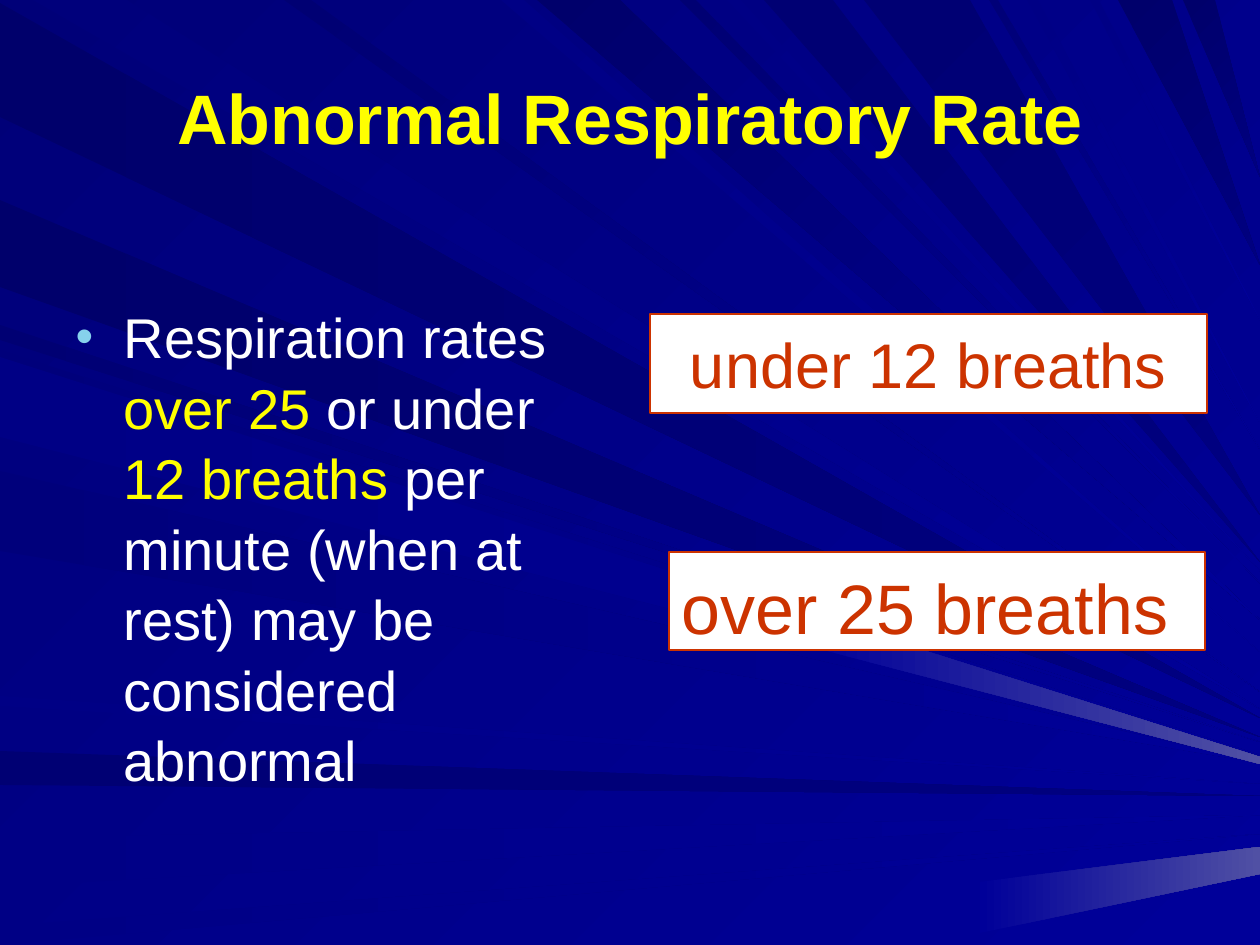
"""Build the slide on abnormal respiratory rates over a background of light rays."""
import pptx
import pptx.dml.color
import pptx.enum.shapes
import pptx.enum.text
import pptx.oxml.ns
import pptx.util
from lxml import etree

EMU_PER_PIXEL = 914400 / 126
WIDTH, HEIGHT = 1260, 945

THEME = {
    "font": "Arial",
    "title": "FFFF00", "highlight": "FFFF00", "text": "FFFFFF",
    "bullet": "86D1EC", "alert": "CC3300", "panel": "FFFFFF",
    "night": "000078", "deep": "00006B", "dark": "000073", "middle": "00007B",
    "soft": "000085", "dim": "000080", "bright": "000099", "glint": "5050A4",
    "title_size": 40, "body_size": 32, "under_size": 36, "over_size": 40,
    "line_width": 0.75, "line_spacing": 1.05,
}

TITLE = "Abnormal Respiratory Rate"
TITLE_BOX = (63, 38, 1134, 157)
BODY = [
    ("Respiration rates ", "text"),
    ("over 25", "highlight"),
    (" or under ", "text"),
    ("12 breaths", "highlight"),
    (" per minute (when at rest) may be considered abnormal", "text"),
]
BODY_BOX = (63, 293, 557, 551)
BODY_INDENT = 48
UNDER = ("under 12 breaths", (650, 314, 557, 99), "under_size", 40)
OVER = ("over 25 breaths", (669, 552, 536, 98), "over_size", 13)
PANEL_TOP_MARGIN = 8

RAYS = [
    ("left", 3, 117, 718, "deep", "dim"),
    ("top", 33, 127, 709, "middle", "bright"),
    ("left", 751, 785, 796, "dark", "dim"),
    ("left", 838, 887, 815, "soft", "bright"),
    ("left", 926, 945, 834, "soft", "bright"),
    ("left", 325, 340, 742, "dark", "bright"),
    ("left", 200, 287, 737, "deep", "dim"),
    ("top", 501, 524, 652, "soft", "bright"),
    ("top", 537, 620, 620, "deep", "bright"),
    ("top", 680, 696, 583, "dark", "bright"),
    ("top", 764, 833, 562, "dark", "dim"),
    ("top", 1118, 1172, 265, "deep", "dim"),
    ("top", 1183, 1215, 177, "deep", "dim"),
    ("left", 350, 431, 755, "middle", "bright"),
    ("left", 471, 551, 763, "middle", "bright"),
    ("left", 696, 706, 784, "soft", "bright"),
    ("top", 284, 311, 692, "dark", "bright"),
    ("top", 727, 741, 571, "soft", "bright"),
    ("top", 864, 970, 515, "dark", "dim"),
    ("top", 989, 998, 450, "night", "bright"),
    ("top", 1027, 1038, 423, "soft", "bright"),
    ("top", 1090, 1099, 320, "soft", "bright"),
    ("left", 357, 437, 760, "soft", "bright"),
]
GLINTS = [(800, 611, 644, 757, 764), (980, 882, 933, 847, 874)]


def px(length):
    return pptx.util.Emu(round(length * EMU_PER_PIXEL))


def rgb(name):
    return pptx.dml.color.RGBColor.from_string(THEME[name])


def shade(fill, start, end, angle):
    fill.gradient()
    fill.gradient_angle = (360 - angle) % 360
    for position, color in enumerate((start, end)):
        stop = fill.gradient_stops[position]
        stop.color.rgb = rgb(color)
        stop.position = position


def place(shape, box):
    shape.left, shape.top, shape.width, shape.height = map(px, box)


def format_run(run, size, color, bold=False):
    run.font.name = THEME["font"]
    run.font.size = pptx.util.Pt(THEME[size])
    run.font.color.rgb = rgb(color)
    run.font.bold = bold


def set_bullet(paragraph, indent):
    properties = paragraph._p.get_or_add_pPr()
    properties.set("marL", str(px(indent)))
    properties.set("indent", str(-px(indent)))
    color = etree.SubElement(properties, pptx.oxml.ns.qn("a:buClr"))
    etree.SubElement(color, pptx.oxml.ns.qn("a:srgbClr"), val=THEME["bullet"])
    etree.SubElement(properties, pptx.oxml.ns.qn("a:buSzPct"), val="90000")
    etree.SubElement(properties, pptx.oxml.ns.qn("a:buFont"), typeface=THEME["font"])
    etree.SubElement(properties, pptx.oxml.ns.qn("a:buChar"), char="•")


def set_spacing(paragraph):
    paragraph.line_spacing = THEME["line_spacing"]
    paragraph.space_before = pptx.util.Pt(0)


def add_outline(group, points, start, end, angle):
    builder = group.shapes.build_freeform(*points[0], scale=EMU_PER_PIXEL)
    builder.add_line_segments(points[1:], close=True)
    outline = builder.convert_to_shape()
    outline.shadow.inherit = False
    outline.line.fill.background()
    shade(outline.fill, start, end, angle)


def add_rays(slide):
    group = slide.shapes.add_group_shape()
    for edge, first, last, apex, start, end in RAYS:
        base = [(0, at) if edge == "left" else (at, 0) for at in (first, last)]
        angle = 0 if edge == "left" else 45
        add_outline(group, base + [(WIDTH, apex)], start, end, angle)
    for left, top, bottom, right_top, right_bottom in GLINTS:
        points = [(left, top), (left, bottom), (WIDTH, right_bottom), (WIDTH, right_top)]
        add_outline(group, points, "bright", "glint", 0)
    slide.shapes._spTree.insert(2, group._element)


def fill_title(shape):
    place(shape, TITLE_BOX)
    shape.text_frame.text = TITLE
    shape.text_frame.vertical_anchor = pptx.enum.text.MSO_ANCHOR.MIDDLE
    paragraph = shape.text_frame.paragraphs[0]
    paragraph.alignment = pptx.enum.text.PP_ALIGN.CENTER
    format_run(paragraph.runs[0], "title_size", "title", bold=True)


def fill_body(shape):
    place(shape, BODY_BOX)
    shape.text_frame.auto_size = pptx.enum.text.MSO_AUTO_SIZE.NONE
    paragraph = shape.text_frame.paragraphs[0]
    set_bullet(paragraph, BODY_INDENT)
    set_spacing(paragraph)
    for text, color in BODY:
        run = paragraph.add_run()
        run.text = text
        format_run(run, "body_size", color)


def fill_panel(shape, text, box, size, left_margin):
    place(shape, box)
    shape.fill.solid()
    shape.fill.fore_color.rgb = rgb("panel")
    shape.line.color.rgb = rgb("alert")
    shape.line.width = pptx.util.Pt(THEME["line_width"])
    frame = shape.text_frame
    frame.text = text
    frame.word_wrap = True
    frame.auto_size = pptx.enum.text.MSO_AUTO_SIZE.NONE
    frame.vertical_anchor = pptx.enum.text.MSO_ANCHOR.TOP
    frame.margin_left, frame.margin_top = px(left_margin), px(PANEL_TOP_MARGIN)
    paragraph = frame.paragraphs[0]
    properties = paragraph._p.get_or_add_pPr()
    properties.set("marL", "0")
    properties.set("indent", "0")
    etree.SubElement(properties, pptx.oxml.ns.qn("a:buNone"))
    paragraph.alignment = pptx.enum.text.PP_ALIGN.LEFT
    set_spacing(paragraph)
    format_run(paragraph.runs[0], size, "alert")


def main():
    presentation = pptx.Presentation()
    presentation.slide_width, presentation.slide_height = px(WIDTH), px(HEIGHT)
    slide = presentation.slides.add_slide(presentation.slide_layouts[3])
    shade(slide.background.fill, "night", "bright", 45)
    add_rays(slide)
    fill_title(slide.shapes.title)
    fill_body(slide.placeholders[1])
    fill_panel(slide.placeholders[2], *UNDER)
    over_panel = slide.shapes.add_shape(pptx.enum.shapes.MSO_SHAPE.RECTANGLE, 0, 0, 0, 0)
    over_panel.shadow.inherit = False
    fill_panel(over_panel, *OVER)
    presentation.save("out.pptx")


if __name__ == "__main__":
    main()
